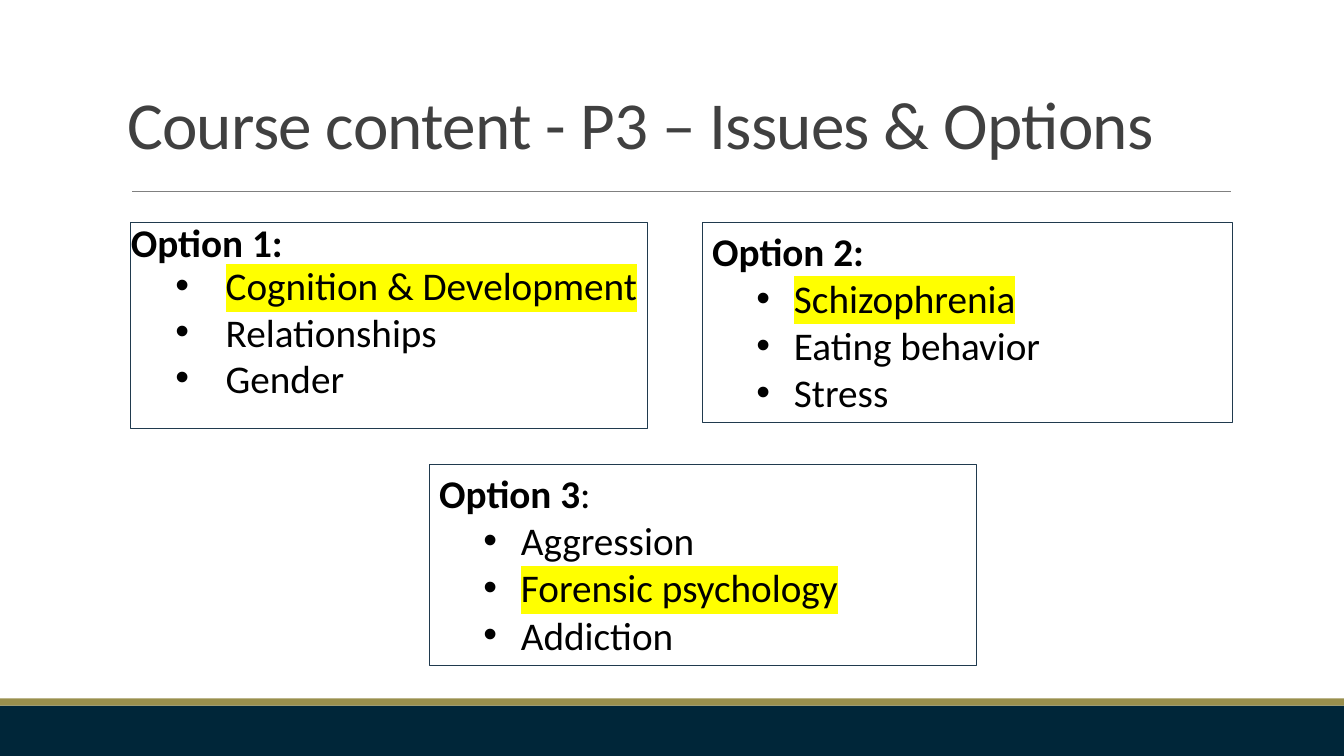
from dataclasses import dataclass

import lxml.etree
import pptx
import pptx.dml.color
import pptx.enum.shapes
import pptx.enum.text
import pptx.oxml.ns
import pptx.slide
import pptx.text.text
import pptx.util
from pptx.util import Cm, Pt

COLOURS = {
    "navy": "002639",
    "gold": "998F4D",
    "rule": "808080",
    "outline": "203A4E",
    "title": "404040",
    "text": "000000",
    "highlight": "FFFF00",
}
FONT = "Calibri"


@dataclass(frozen=True)
class Spacing:
    line: float
    heading: tuple[float, float]
    topic: tuple[float, float]


@dataclass(frozen=True)
class Option:
    left: float
    top: float
    width: float
    height: float
    heading: str
    topics: tuple[str, ...]
    chosen: str
    colon_bold: bool = True
    indent: float = 2.06
    hanging: float = 0.95
    side_inset: float = 0.25
    spacing: Spacing = Spacing(1.0, (0, 0), (0, 0))


@dataclass(frozen=True)
class Band:
    top: float
    height: float
    colour: str


BANDS = (Band(17.78, 1.27, "navy"), Band(17.6, 0.18, "gold"))
OPTIONS = (
    Option(3.3, 5.61, 13.03, 5.18, "Option 1",
           ("Cognition & Development", "Relationships", "Gender"),
           "Cognition & Development", indent=2.39, hanging=1.27, side_inset=0,
           spacing=Spacing(0.8, (12, 2), (2, 4))),
    Option(10.82, 11.71, 13.79, 5.05, "Option 3",
           ("Aggression", "Forensic psychology", "Addiction"),
           "Forensic psychology", colon_bold=False),
    Option(17.7, 5.61, 13.36, 5.05, "Option 2",
           ("Schizophrenia", "Eating behavior", "Stress"), "Schizophrenia"),
)


def rgb(name: str) -> pptx.dml.color.RGBColor:
    return pptx.dml.color.RGBColor.from_string(COLOURS[name])


def add_child(parent: lxml.etree._Element, tag: str, **attributes: str) -> lxml.etree._Element:
    return lxml.etree.SubElement(parent, pptx.oxml.ns.qn(tag), attributes)


def set_font(paragraph: pptx.text.text._Paragraph, size: float, colour: str) -> None:
    paragraph.font.name = FONT
    paragraph.font.size = Pt(size)
    paragraph.font.color.rgb = rgb(colour)


def set_bullet(paragraph: pptx.text.text._Paragraph, indent: float, hanging: float) -> None:
    properties = paragraph._p.get_or_add_pPr()
    properties.set("marL", str(Cm(indent)))
    properties.set("indent", str(-Cm(hanging)))
    add_child(properties, "a:buFont", typeface="Arial")
    add_child(properties, "a:buChar", char="•")


def highlight(run: pptx.text.text._Run) -> None:
    marker = add_child(run._r.get_or_add_rPr(), "a:highlight")
    add_child(marker, "a:srgbClr", val=COLOURS["highlight"])


def set_spacing(paragraph: pptx.text.text._Paragraph, line: float,
                around: tuple[float, float]) -> None:
    paragraph.alignment = pptx.enum.text.PP_ALIGN.LEFT
    paragraph.line_spacing = line
    paragraph.space_before, paragraph.space_after = map(Pt, around)


def add_band(slide: pptx.slide.Slide, band: Band, width: int) -> None:
    bar = slide.shapes.add_shape(pptx.enum.shapes.MSO_SHAPE.RECTANGLE,
                                 0, Cm(band.top), width, Cm(band.height))
    bar.shadow.inherit = False
    bar.fill.solid()
    bar.fill.fore_color.rgb = rgb(band.colour)
    bar.line.fill.background()


def add_title_rule(slide: pptx.slide.Slide) -> None:
    rule = slide.shapes.add_connector(pptx.enum.shapes.MSO_CONNECTOR.STRAIGHT,
                                      Cm(3.33), Cm(4.82), Cm(31.01), Cm(4.82))
    rule.line.color.rgb = rgb("rule")
    rule.line.width = Pt(0.5)
    add_child(rule._element.spPr, "a:effectLst")


def add_option(slide: pptx.slide.Slide, option: Option) -> None:
    box = slide.shapes.add_shape(pptx.enum.shapes.MSO_SHAPE.RECTANGLE, Cm(option.left),
                                 Cm(option.top), Cm(option.width), Cm(option.height))
    box.shadow.inherit = False
    box.fill.background()
    box.line.color.rgb = rgb("outline")
    box.line.width = Pt(0.75)
    frame = box.text_frame
    frame.word_wrap = True
    frame.vertical_anchor = pptx.enum.text.MSO_ANCHOR.TOP
    frame.margin_left = frame.margin_right = Cm(option.side_inset)

    heading = frame.paragraphs[0]
    set_spacing(heading, option.spacing.line, option.spacing.heading)
    set_font(heading, 28, "text")
    if option.colon_bold:
        heading.add_run().text = f"{option.heading}:"
        heading.font.bold = True
    else:
        for part, bold in ((option.heading, True), (":", False)):
            run = heading.add_run()
            run.text = part
            run.font.bold = bold

    for topic in option.topics:
        entry = frame.add_paragraph()
        entry.level = 1
        set_bullet(entry, option.indent, option.hanging)
        set_spacing(entry, option.spacing.line, option.spacing.topic)
        set_font(entry, 28, "text")
        run = entry.add_run()
        run.text = topic
        if topic == option.chosen:
            highlight(run)


def set_title(slide: pptx.slide.Slide, wording: str) -> None:
    title = slide.shapes.title
    title.left, title.top, title.width, title.height = Cm(2.95), Cm(0.2), Cm(27.94), Cm(4.04)
    frame = title.text_frame
    frame.auto_size = pptx.enum.text.MSO_AUTO_SIZE.NONE
    frame.vertical_anchor = pptx.enum.text.MSO_ANCHOR.BOTTOM
    heading = frame.paragraphs[0]
    set_spacing(heading, 0.85, (0, 0))
    set_font(heading, 48, "title")
    run = heading.add_run()
    run.text = wording
    run._r.get_or_add_rPr().set("spc", "-50")


def main() -> None:
    presentation = pptx.Presentation()
    presentation.slide_width, presentation.slide_height = Cm(33.87), Cm(19.05)
    slide = presentation.slides.add_slide(presentation.slide_layouts.get_by_name("Title Only"))
    set_title(slide, "Course content - P3 – Issues & Options")
    for band in BANDS:
        add_band(slide, band, presentation.slide_width)
    add_title_rule(slide)
    for option in OPTIONS:
        add_option(slide, option)
    presentation.save("out.pptx")


if __name__ == "__main__":
    main()
